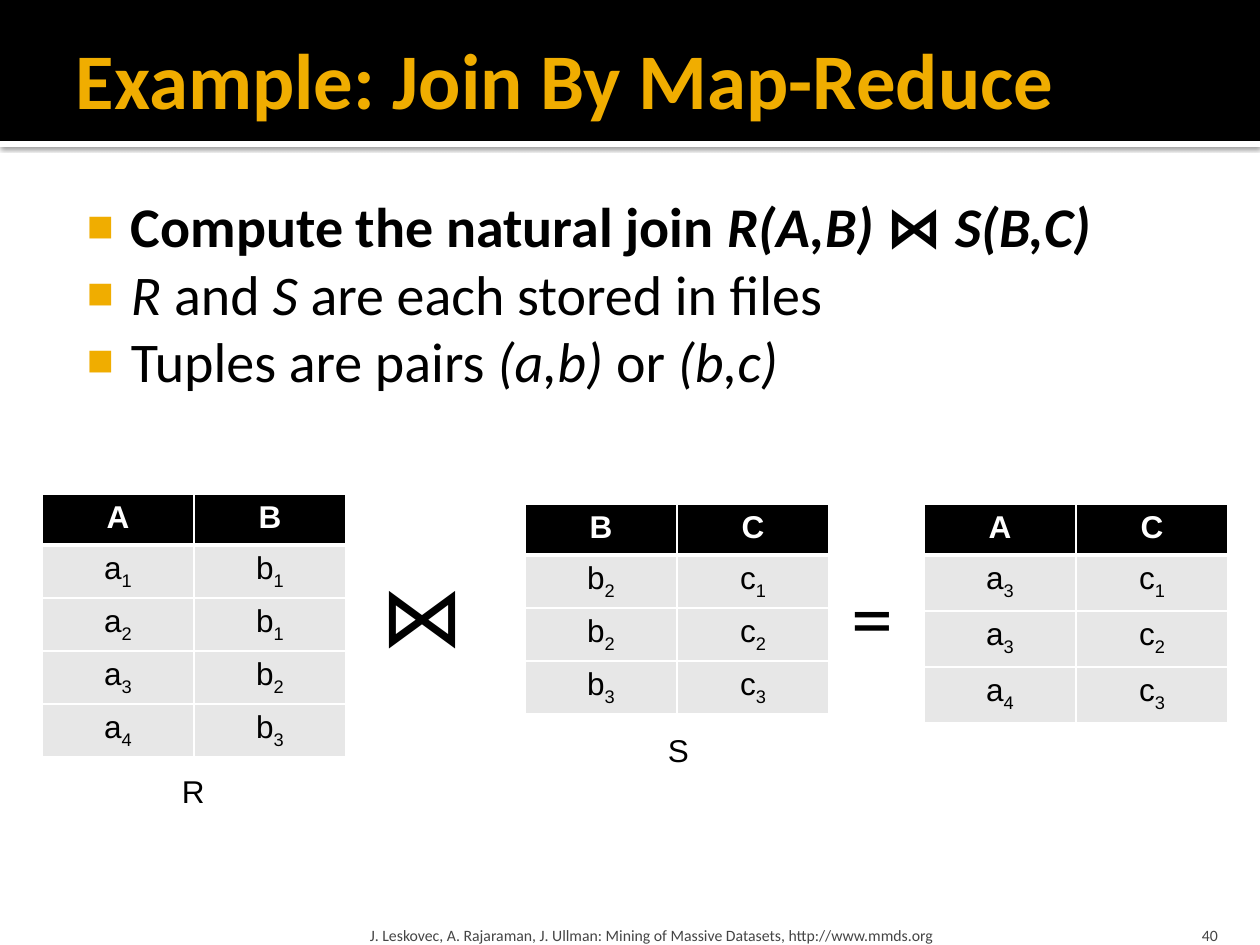
import pptx
import pptx.util
import pptx.oxml
import pptx.oxml.ns
import pptx.dml.color
import pptx.enum.shapes
import pptx.enum.text

PX = 914400 / 126
COLORS = {"black": "000000", "white": "FFFFFF", "gold": "F0AD00", "gray": "E7E7E7", "footer": "454545"}
ANCHOR = pptx.enum.text.MSO_ANCHOR
ALIGN = pptx.enum.text.PP_ALIGN
NS = pptx.oxml.ns.nsdecls("a")
BOLD, ITALIC = {"bold": True}, {"italic": True}


def px(n):
    """Turn px into EMU."""
    return pptx.util.Emu(round(n * PX))


def rgb(name):
    """Look up a named colour."""
    return pptx.dml.color.RGBColor.from_string(COLORS[name])


def add_run(p, text, size, font="Calibri", color="black", sub=False, **style):
    """Add one formatted run, as a subscript when asked."""
    r = p.add_run()
    r.text = text
    values = {"size": pptx.util.Pt(size), "name": font, **style}
    for name, value in values.items():
        setattr(r.font, name, value)
    r.font.color.rgb = rgb(color)
    if sub:
        r.font._element.set("baseline", "-25000")


def set_frame(tf, insets=(13, 6, 13, 6), anchor=ANCHOR.TOP, wrap=True):
    """Set insets, anchor and wrapping of a text frame."""
    values = dict(zip(("margin_left", "margin_top", "margin_right", "margin_bottom"), map(px, insets)))
    values.update(vertical_anchor=anchor, word_wrap=wrap, auto_size=pptx.enum.text.MSO_AUTO_SIZE.NONE)
    for name, value in values.items():
        setattr(tf, name, value)


def add_label(slide, box, text, size, align=ALIGN.LEFT, font="Calibri", color="black", **frame):
    """Add a one-line text box."""
    tf = slide.shapes.add_textbox(*map(px, box)).text_frame
    set_frame(tf, **frame)
    p = tf.paragraphs[0]
    p.alignment = align
    add_run(p, text, size, font, color)


def add_header(slide, box, text):
    """Draw the black band with its shadowed white edge and the title."""
    x, y, w, h = box
    for top, height, color in ((y + h, 6, "white"), (y, h, "black")):
        sp = slide.shapes.add_shape(pptx.enum.shapes.MSO_SHAPE.RECTANGLE, *map(px, (x, top, w, height)))
        sp.shadow.inherit = False
        sp.fill.solid()
        sp.fill.fore_color.rgb = rgb(color)
        sp.line.fill.background()
        if color == "white":
            effects = sp._element.spPr.find(pptx.oxml.ns.qn("a:effectLst"))
            effects.append(pptx.oxml.parse_xml(
                f'<a:outerShdw {NS} blurRad="31750" dist="10160" dir="5400000" algn="tl" rotWithShape="0">'
                f'<a:srgbClr val="{COLORS["black"]}"><a:alpha val="60000"/></a:srgbClr></a:outerShdw>'))
    title = slide.shapes.title
    title.left, title.top, title.width, title.height = map(px, (x + 63, y + 10, w - 126, 136))
    set_frame(title.text_frame, (13, 6, 6, 6), ANCHOR.MIDDLE)
    p = title.text_frame.paragraphs[0]
    p.alignment = ALIGN.LEFT
    add_run(p, text, 45, color="gold", **BOLD)
    slide.shapes._spTree.append(title._element)


def add_bullets(slide, box, items):
    """Add a list with square gold bullets."""
    tf = slide.shapes.add_textbox(*map(px, box)).text_frame
    set_frame(tf, (8, 13, 13, 6))
    for i, runs in enumerate(items):
        p = tf.add_paragraph() if i else tf.paragraphs[0]
        pPr = p._p.get_or_add_pPr()
        pPr.set("marL", str(px(60)))
        pPr.set("indent", str(px(-44)))
        for xml in (f'<a:buClr {NS}><a:srgbClr val="{COLORS["gold"]}"/></a:buClr>',
                    f'<a:buSzPct {NS} val="80000"/>',
                    f'<a:buFont {NS} typeface="Arial"/>',
                    f'<a:buChar {NS} char="■"/>'):
            pPr.append(pptx.oxml.parse_xml(xml))
        for text, style in runs:
            add_run(p, text, 32, **style)


def set_borders(cell, top, bottom):
    """Give a cell white borders of the given top and bottom widths."""
    tcPr = cell._tc.get_or_add_tcPr()
    for side, width in (("L", 1), ("R", 1), ("T", top), ("B", bottom)):
        tcPr.append(pptx.oxml.parse_xml(
            f'<a:ln{side} {NS} w="{width * 12700}"><a:solidFill>'
            f'<a:srgbClr val="{COLORS["white"]}"/></a:solidFill></a:ln{side}>'))


def add_relation(slide, box, header, tuples, row_height=51):
    """Add a relation table whose entries are letters with subscript indices."""
    x, y, w = box
    rows = [header, *tuples]
    table = slide.shapes.add_table(len(rows), len(header), *map(px, (x, y, w, 51 * len(rows)))).table
    for col in table.columns:
        col.width = px(w / len(header))
    for i, values in enumerate(rows):
        table.rows[i].height = px(row_height if i else 51)
        for j, value in enumerate(values):
            cell = table.cell(i, j)
            set_borders(cell, 3 if i == 1 else 1, 1 if i else 3)
            cell.fill.solid()
            cell.fill.fore_color.rgb = rgb("gray" if i else "black")
            p = cell.text_frame.paragraphs[0]
            p.alignment = ALIGN.CENTER
            if i:
                add_run(p, value[0], 18, "Arial", bold=False)
                add_run(p, value[1:], 18, "Arial", sub=True, bold=False)
            else:
                add_run(p, value, 18, "Arial", "white", **BOLD)


def add_join(slide, box):
    """Lay out R joined with S and the resulting relation."""
    x, y = box
    add_relation(slide, (x, y, 304), "AB", (("a1", "b1"), ("a2", "b1"), ("a3", "b2"), ("a4", "b3")))
    add_relation(slide, (x + 483, y + 10, 304), "BC", (("b2", "c1"), ("b2", "c2"), ("b3", "c3")))
    add_relation(slide, (x + 882, y + 10, 304), "AC", (("a3", "c1"), ("a3", "c2"), ("a4", "c3")), 56)
    for left, top, width, text in ((326, 63, 96, "⋈"), (797, 65, 69, "=")):
        add_label(slide, (x + left, y + top, width, 114), text, 48, wrap=False)
    for left, top, text in ((127, 272, "R"), (613, 231, "S")):
        add_label(slide, (x + left, y + top, 48, 50), text, 18, font="Arial", wrap=False)


def add_footer(slide, box, text, number):
    """Add the source line and the page number."""
    x, y, w, h = box
    add_label(slide, (x, y, 759, h), text, 9, color="footer", insets=(6, 6, 6, 0), anchor=ANCHOR.BOTTOM)
    add_label(slide, (x + w - 101, y, 101, h), number, 9, ALIGN.RIGHT, color="footer",
              insets=(13, 6, 13, 0), anchor=ANCHOR.BOTTOM)


def main():
    """Build and save the slide."""
    prs = pptx.Presentation()
    prs.slide_width, prs.slide_height = px(1260), px(945)
    slide = prs.slides.add_slide(prs.slide_layouts[5])
    add_header(slide, (0, 0, 1260, 141), "Example: Join By Map-Reduce")
    add_bullets(slide, (63, 179, 1134, 294), (
        (("Compute the natural join ", BOLD), ("R(A,B) ", BOLD | ITALIC), ("⋈", BOLD),
         (" S(B,C)", BOLD | ITALIC)),
        (("R", ITALIC), (" and ", {}), ("S", ITALIC), (" are each stored in files", {})),
        (("Tuples are pairs ", {}), ("(a,b)", ITALIC), (" or ", {}), ("(b,c)", ITALIC))))
    add_join(slide, (42, 494))
    add_footer(slide, (364, 907, 867, 38),
               "J. Leskovec, A. Rajaraman, J. Ullman: Mining of Massive Datasets, http://www.mmds.org", "40")
    prs.save("out.pptx")


if __name__ == "__main__":
    main()
